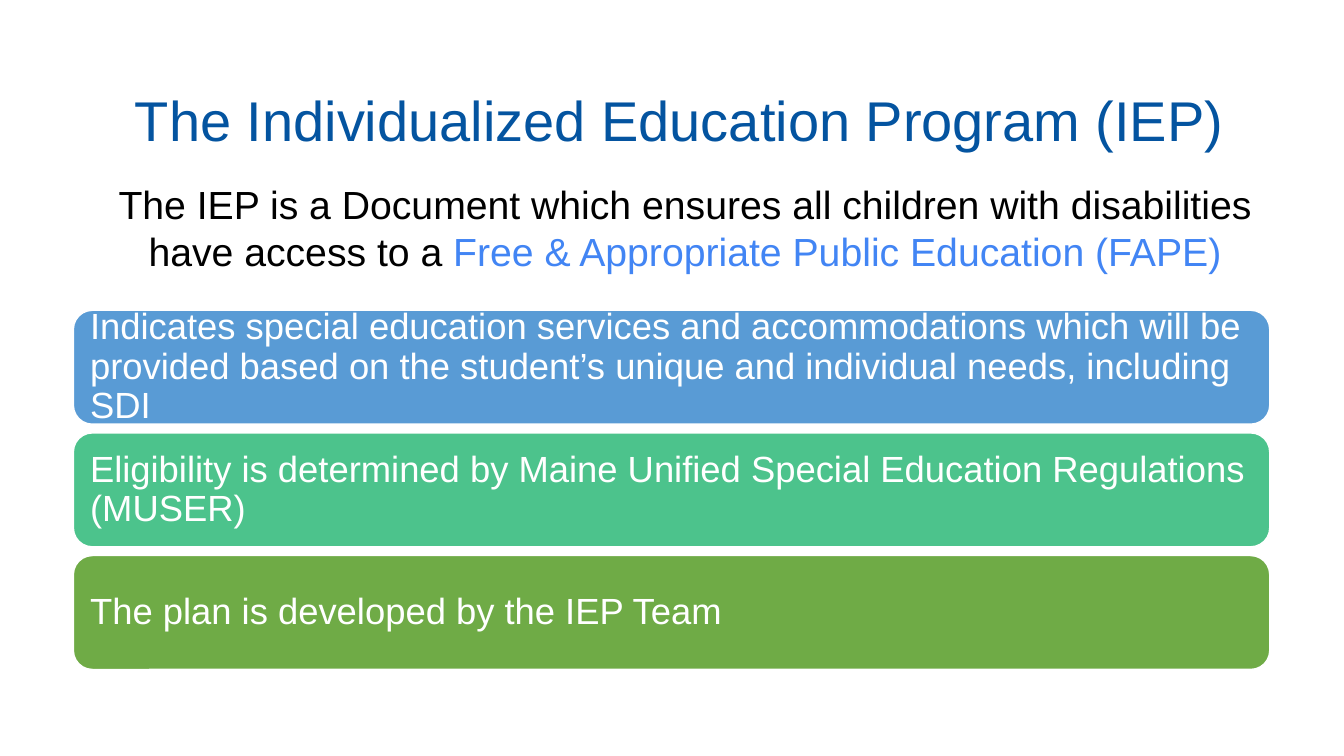
from dataclasses import dataclass

import pptx
import pptx.dml.color
import pptx.enum.shapes
import pptx.enum.text
import pptx.util
from pptx.util import Cm

FONT = "Arial"
WHITE = "FFFFFF"


@dataclass
class Run:
    text: str
    color: str


@dataclass
class TextBlock:
    left: float
    top: float
    width: float
    height: float
    size: int
    align: pptx.enum.text.PP_ALIGN
    runs: list[Run]


@dataclass
class Bar:
    text: str
    fill: str


BAR_LEFT, BAR_TOP, BAR_WIDTH, BAR_HEIGHT, BAR_PITCH = 1.85, 7.82, 30.15, 2.87, 3.09
BAR_INSET = 0.28

BLOCKS = [
    TextBlock(3.15, 2.03, 30.7, 1.96, 40, pptx.enum.text.PP_ALIGN.LEFT,
              [Run("The Individualized Education Program (IEP)", "0454A0")]),
    TextBlock(2.26, 4.42, 30, 2.64, 28, pptx.enum.text.PP_ALIGN.CENTER,
              [Run("The IEP is a Document which ensures all children with "
                   "disabilities have access to a ", "000000"),
               Run("Free & Appropriate Public Education (FAPE)", "4285F4")]),
]

BARS = [
    Bar("Indicates special education services and accommodations which will be "
        "provided based on the student’s unique and individual needs, including SDI",
        "599BD5"),
    Bar("Eligibility is determined by Maine Unified Special Education Regulations "
        "(MUSER)", "4CC38C"),
    Bar("The plan is developed by the IEP Team", "6FAB46"),
]


def rgb(value: str) -> pptx.dml.color.RGBColor:
    return pptx.dml.color.RGBColor.from_string(value)


def add_text(s: pptx.slide.Slide, block: TextBlock) -> None:
    sp = s.shapes.add_textbox(Cm(block.left), Cm(block.top),
                              Cm(block.width), Cm(block.height))
    tf = sp.text_frame
    tf.word_wrap = True
    p = tf.paragraphs[0]
    p.alignment = block.align
    p.font.name = FONT
    p.font.size = pptx.util.Pt(block.size)
    for run in block.runs:
        r = p.add_run()
        r.text = run.text
        r.font.color.rgb = rgb(run.color)


def add_bar(s: pptx.slide.Slide, bar: Bar, top: float) -> None:
    sp = s.shapes.add_shape(pptx.enum.shapes.MSO_SHAPE.ROUNDED_RECTANGLE,
                            Cm(BAR_LEFT), Cm(top), Cm(BAR_WIDTH), Cm(BAR_HEIGHT))
    sp.shadow.inherit = False
    sp.fill.solid()
    sp.fill.fore_color.rgb = rgb(bar.fill)
    sp.line.color.rgb = rgb(WHITE)
    sp.line.width = pptx.util.Pt(1)
    tf = sp.text_frame
    tf.word_wrap = True
    tf.vertical_anchor = pptx.enum.text.MSO_ANCHOR.MIDDLE
    tf.margin_left = tf.margin_right = Cm(BAR_INSET)
    tf.margin_top = tf.margin_bottom = Cm(BAR_INSET)
    p = tf.paragraphs[0]
    p.text = bar.text
    p.alignment = pptx.enum.text.PP_ALIGN.LEFT
    p.line_spacing = 0.9
    p.font.name = FONT
    p.font.size = pptx.util.Pt(26)
    p.font.color.rgb = rgb(WHITE)


def main() -> None:
    prs = pptx.Presentation()
    prs.slide_width, prs.slide_height = Cm(33.87), Cm(19.05)
    s = prs.slides.add_slide(prs.slide_layouts[6])
    for block in BLOCKS:
        add_text(s, block)
    for i, bar in enumerate(BARS):
        add_bar(s, bar, BAR_TOP + i * BAR_PITCH)
    prs.save("out.pptx")


if __name__ == "__main__":
    main()
